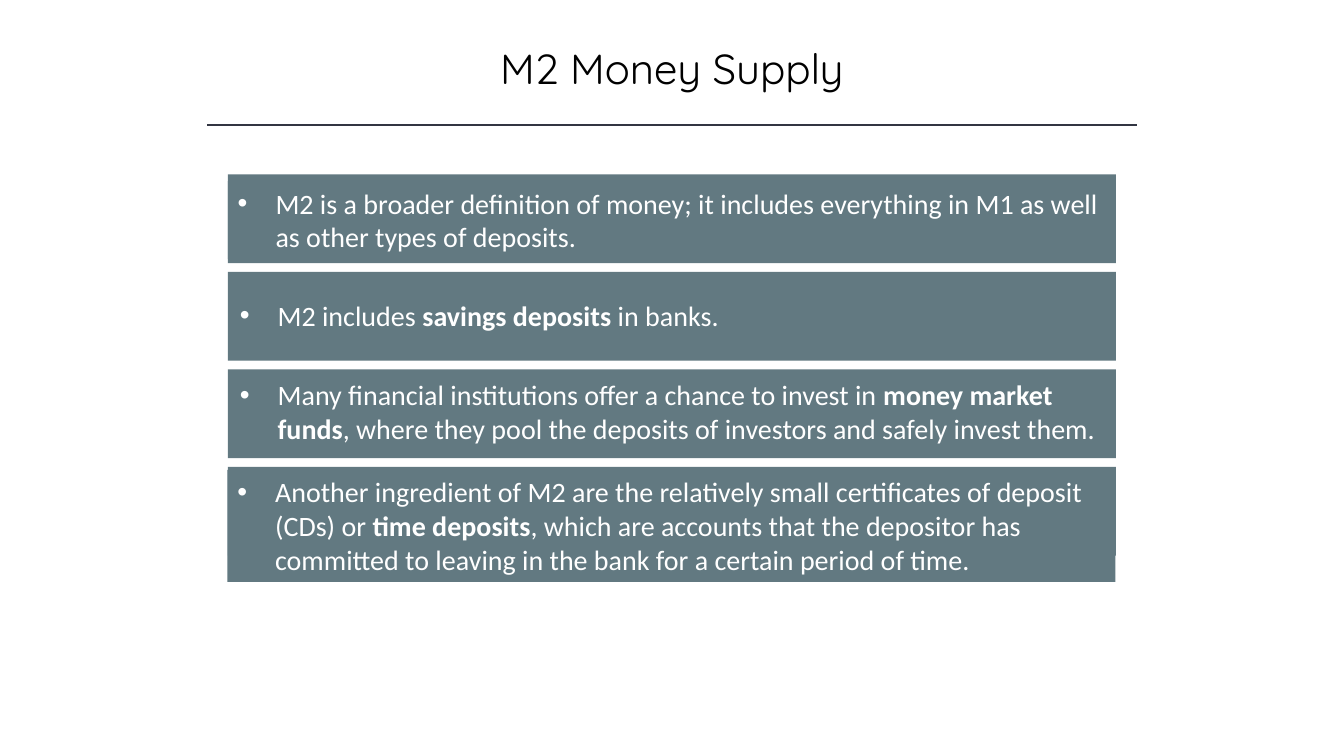
import pptx
import pptx.util
import pptx.dml.color
import pptx.enum.shapes
import pptx.enum.text
import lxml.etree
from pptx.util import Pt
from pptx.oxml.ns import qn


def color(value):
    return pptx.dml.color.RGBColor.from_string(value)


def add_span(para, text, font="Calibri", size=20, fill="FFFFFF", bold=False):
    span = para.add_run()
    span.text = text
    span.font.name = font
    span.font.size = Pt(size)
    span.font.bold = bold
    span.font.color.rgb = color(fill)


class SlideBuilder:
    bar_fill = "627981"
    rule_color = "323542"
    title_color = "000000"
    title_font = "Quicksand"
    bullet_indent = 27

    def __init__(self, page):
        self.page = page

    def title(self, text, left, top, width, height):
        box = self.page.shapes.add_textbox(Pt(left), Pt(top), Pt(width), Pt(height))
        box.text_frame.word_wrap = True
        para = box.text_frame.paragraphs[0]
        para.alignment = pptx.enum.text.PP_ALIGN.CENTER
        add_span(para, text, font=self.title_font, size=30, fill=self.title_color)

    def rule(self, left, right, top):
        line = self.page.shapes.add_connector(
            pptx.enum.shapes.MSO_CONNECTOR.STRAIGHT, Pt(left), Pt(top), Pt(right), Pt(top))
        line.line.color.rgb = color(self.rule_color)
        line.line.width = Pt(1)
        lxml.etree.SubElement(line._element.spPr, qn("a:effectLst"))

    def bar(self, left, top, width, height):
        box = self.page.shapes.add_shape(
            pptx.enum.shapes.MSO_SHAPE.RECTANGLE, Pt(left), Pt(top), Pt(width), Pt(height))
        box.shadow.inherit = False
        box.fill.solid()
        box.fill.fore_color.rgb = color(self.bar_fill)
        box.line.fill.background()
        return box

    def bullet(self, spans, left, top, width, height):
        frame = self.bar(left, top, width, height).text_frame
        frame.word_wrap = True
        frame.vertical_anchor = pptx.enum.text.MSO_ANCHOR.TOP
        para = frame.paragraphs[0]
        para.alignment = pptx.enum.text.PP_ALIGN.LEFT
        properties = para._p.get_or_add_pPr()
        properties.set("marL", str(Pt(self.bullet_indent)))
        properties.set("indent", str(-Pt(self.bullet_indent)))
        lxml.etree.SubElement(properties, qn("a:buFont"), typeface="Arial")
        lxml.etree.SubElement(properties, qn("a:buChar"), char="•")
        for text, bold in spans:
            add_span(para, text, bold=bold)


BAR_LEFT, BAR_TOP, BAR_WIDTH, BAR_HEIGHT, BAR_PITCH = 162.7, 124.6, 634.3, 63.4, 69.6

POINTS = [
    ((162.7, 129.4, 634.3, 55.7), [
        ("M2 is a broader definition of money; it includes everything in M1 as well "
         "as other types of deposits.", False)]),
    ((164.2, 209.5, 612, 31.5), [
        ("M2 includes ", False),
        ("savings deposits ", True),
        ("in banks.", False)]),
    ((164.2, 266.2, 632.2, 55.7), [
        ("Many financial institutions offer a chance to invest in ", False),
        ("money market funds", True),
        (", where they pool the deposits of investors and safely invest them.", False)]),
    ((162.4, 335.7, 634.3, 80), [
        ("Another ingredient of M2 are the relatively small certificates of deposit (CDs) or ", False),
        ("time deposits", True),
        (", which are accounts that the depositor has committed to leaving in the bank "
         "for a certain period of time.", False)]),
]


def main():
    deck = pptx.Presentation()
    deck.slide_width, deck.slide_height = Pt(960), Pt(540)
    builder = SlideBuilder(deck.slides.add_slide(deck.slide_layouts[6]))
    builder.title("M2 Money Supply", 120, 26.6, 720, 43.6)
    builder.rule(148, 812, 89.4)
    for index, (label_place, spans) in enumerate(POINTS):
        builder.bar(BAR_LEFT, BAR_TOP + index * BAR_PITCH, BAR_WIDTH, BAR_HEIGHT)
        builder.bullet(spans, *label_place)
    deck.save("out.pptx")


if __name__ == "__main__":
    main()
